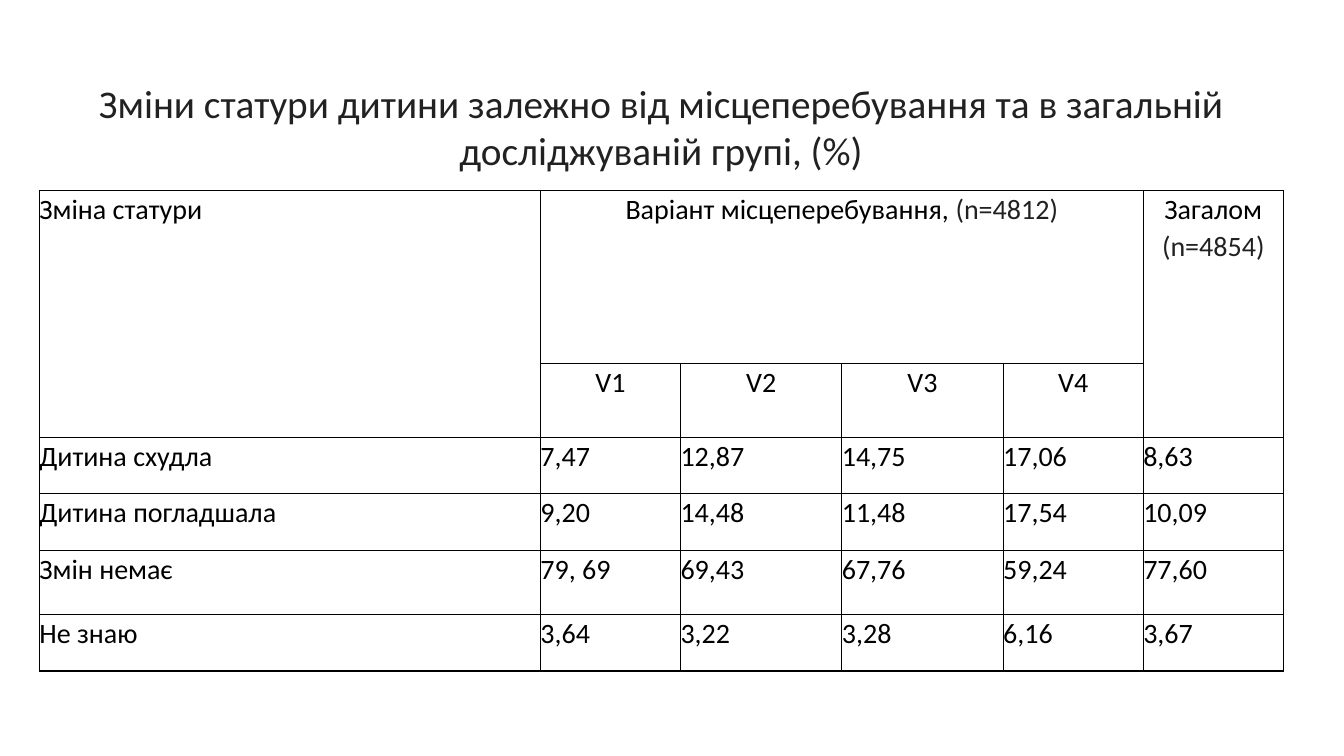
import pptx
import pptx.dml.color
import pptx.enum.text
import pptx.oxml.ns
import pptx.util
from lxml import etree

Inches = pptx.util.Inches
Pt = pptx.util.Pt
CENTER = pptx.enum.text.PP_ALIGN.CENTER
LEFT = pptx.enum.text.PP_ALIGN.LEFT

# Content
TITLE = "Зміни статури дитини залежно від місцеперебування та в загальній досліджуваній групі, (%)"
COLORS = {"text": "000000", "muted": "212121", "border": "000000"}
FONT = "Calibri"
COLUMN_WIDTHS = [4.97, 1.39, 1.6, 1.6, 1.39, 1.39]
ROW_HEIGHTS = [1.72, 0.58, 0.56, 0.56, 0.64, 0.56]
# (row, column, row span, column span, alignment, paragraphs of (text, color))
HEADINGS = [
    (0, 0, 2, 1, LEFT, [[("Зміна статури", "text")]]),
    (0, 1, 1, 4, CENTER, [[("Варіант місцеперебування, ", "text"), ("(n=4812)", "muted")]]),
    (0, 5, 2, 1, CENTER, [[("Загалом", "text")], [("(n=4854)", "muted")]]),
]
VARIANTS = ["V1", "V2", "V3", "V4"]
RESULTS = [
    ["Дитина схудла", "7,47", "12,87", "14,75", "17,06", "8,63"],
    ["Дитина погладшала", "9,20", "14,48", "11,48", "17,54", "10,09"],
    ["Змін немає", "79, 69", "69,43", "67,76", "59,24", "77,60"],
    ["Не знаю", "3,64", "3,22", "3,28", "6,16", "3,67"],
]
LEFT_EDGE, WIDTH = 0.39, 12.33


def color(name):
    return pptx.dml.color.RGBColor.from_string(COLORS[name])


def write(frame, paragraphs, size, align):
    for index, spans in enumerate(paragraphs):
        para = frame.paragraphs[0] if index == 0 else frame.add_paragraph()
        para.alignment = align
        para.font.size = Pt(size)
        para.font.name = FONT
        for text, color_name in spans:
            span = para.add_run()
            span.text = text
            span.font.color.rgb = color(color_name)


def write_cell(cell, paragraphs, align):
    write(cell.text_frame, paragraphs, 20, align)
    for para in cell.text_frame.paragraphs:
        para.line_spacing = 1.07


def style_cell(cell):
    cell.margin_left = cell.margin_right = cell.margin_top = cell.margin_bottom = 0
    qn = pptx.oxml.ns.qn
    properties = cell._tc.get_or_add_tcPr()
    for side in ("a:lnL", "a:lnR", "a:lnT", "a:lnB"):
        line = etree.SubElement(properties, qn(side), w=str(Pt(1)))
        fill = etree.SubElement(line, qn("a:solidFill"))
        etree.SubElement(fill, qn("a:srgbClr"), val=COLORS["border"])
    cell.fill.background()


def main():
    deck = pptx.Presentation()
    deck.slide_width, deck.slide_height = Inches(13.33), Inches(7.5)
    page = deck.slides.add_slide(deck.slide_layouts[6])

    # Table grid
    frame = page.shapes.add_table(
        len(ROW_HEIGHTS), len(COLUMN_WIDTHS),
        Inches(LEFT_EDGE), Inches(1.89), Inches(WIDTH), Inches(sum(ROW_HEIGHTS)))
    table = frame.table
    table.first_row = table.horz_banding = False
    for column, width in zip(table.columns, COLUMN_WIDTHS):
        column.width = Inches(width)
    for row, height in zip(table.rows, ROW_HEIGHTS):
        row.height = Inches(height)
    for cell in table.iter_cells():
        style_cell(cell)

    # Headings
    for row, column, rows, columns, align, paragraphs in HEADINGS:
        cell = table.cell(row, column)
        cell.merge(table.cell(row + rows - 1, column + columns - 1))
        write_cell(cell, paragraphs, align)
    for column, variant in enumerate(VARIANTS, start=1):
        write_cell(table.cell(1, column), [[(variant, "text")]], CENTER)

    # Results
    for row, values in enumerate(RESULTS, start=2):
        for column, value in enumerate(values):
            write_cell(table.cell(row, column), [[(value, "text")]], LEFT)

    # Title
    box = page.shapes.add_textbox(Inches(LEFT_EDGE), Inches(0.74), Inches(WIDTH), Inches(1.04))
    box.text_frame.word_wrap = True
    write(box.text_frame, [[(TITLE, "muted")]], 28, CENTER)

    deck.save("out.pptx")


if __name__ == "__main__":
    main()
